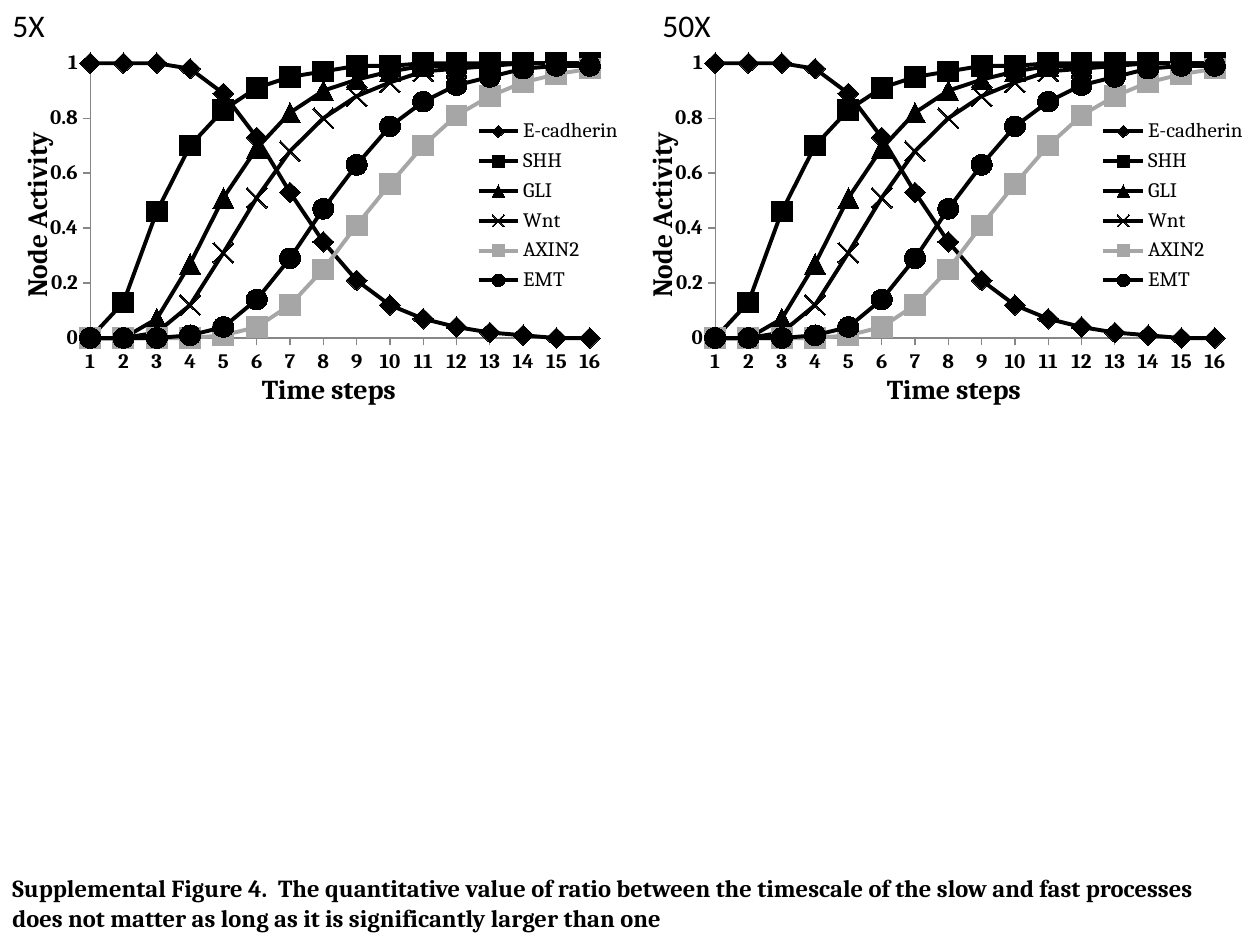
from lxml import etree
from pptx import Presentation
from pptx import util as u
from pptx.chart import data
from pptx.dml.color import RGBColor
from pptx.enum import chart as ch
from pptx.oxml.ns import qn

BLACK = RGBColor(0x00, 0x00, 0x00)
GRAY = RGBColor(0xA6, 0xA6, 0xA6)
AXIS_GRAY = RGBColor(0x86, 0x86, 0x86)
SCALE = u.Inches(1) / 126

MARK = ch.XL_MARKER_STYLE
SERIES = [
    ("E-cadherin", MARK.DIAMOND, BLACK,
     (1, 1, 1, 0.98, 0.89, 0.73, 0.53, 0.35, 0.21, 0.12, 0.07, 0.04, 0.02, 0.01, 0, 0)),
    ("SHH", MARK.SQUARE, BLACK,
     (0, 0.13, 0.46, 0.7, 0.83, 0.91, 0.95, 0.97, 0.99, 0.99, 1, 1, 1, 1, 1, 1)),
    ("GLI", MARK.TRIANGLE, BLACK,
     (0, 0, 0.07, 0.27, 0.51, 0.69, 0.82, 0.9, 0.94, 0.97, 0.99, 0.99, 1, 1, 1, 1)),
    ("Wnt", MARK.X, BLACK,
     (0, 0, 0.02, 0.12, 0.31, 0.51, 0.68, 0.8, 0.88, 0.93, 0.97, 0.98, 0.99, 1, 1, 1)),
    ("AXIN2", MARK.SQUARE, GRAY,
     (0, 0, 0, 0, 0.01, 0.04, 0.12, 0.25, 0.41, 0.56, 0.7, 0.81, 0.88, 0.93, 0.96, 0.98)),
    ("EMT", MARK.CIRCLE, BLACK,
     (0, 0, 0, 0.01, 0.04, 0.14, 0.29, 0.47, 0.63, 0.77, 0.86, 0.92, 0.95, 0.98, 0.99, 0.99)),
]


def px(*lengths):
    return [u.Emu(round(n * SCALE)) for n in lengths]


def set_font(font, size, name, bold=False):
    font.size, font.name, font.bold = u.Pt(size), name, bold
    font.color.rgb = BLACK


def set_layout(parent, index, target=None, **box):
    old = parent.find(qn("c:layout"))
    if old is not None:
        parent.remove(old)
    layout = etree.Element(qn("c:layout"))
    manual = etree.SubElement(layout, qn("c:manualLayout"))
    values = {"layoutTarget": target} if target else {}
    values.update(xMode="edge", yMode="edge", **box)
    for tag, value in values.items():
        etree.SubElement(manual, qn("c:" + tag)).set("val", str(value))
    parent.insert(index, layout)


class Figure:
    def __init__(self, prs, heading_font="Cambria", body_font="Calibri"):
        self.s = prs.slides.add_slide(prs.slide_layouts[6])
        self.heading_font = heading_font
        self.body_font = body_font

    def label(self, words, box, size, font, bold=False):
        tf = self.s.shapes.add_textbox(*px(*box)).text_frame
        tf.word_wrap = True
        p = tf.paragraphs[0]
        p.text = words
        set_font(p.font, size, font, bold)

    def axis(self, axis, title, x, y):
        axis.has_major_gridlines = False
        axis.major_tick_mark = ch.XL_TICK_MARK.OUTSIDE
        axis.format.line.color.rgb = AXIS_GRAY
        set_font(axis.tick_labels.font, 12, self.heading_font, True)
        p = axis.axis_title.text_frame.paragraphs[0]
        p.text = title
        set_font(p.font, 16, self.heading_font, True)
        set_layout(axis.axis_title._element, 1, x=x, y=y)

    def activity_chart(self, box):
        cd = data.CategoryChartData()
        cd.categories = [str(step) for step in range(1, 17)]
        for name, _, _, values in SERIES:
            cd.add_series(name, values)
        chart = self.s.shapes.add_chart(
            ch.XL_CHART_TYPE.LINE_MARKERS, *px(*box), cd).chart
        chart.has_title = False
        set_font(chart.font, 10, self.body_font)

        plot = chart.plots[0]
        plot.vary_by_categories = False
        for ser, (_, style, color, _) in zip(plot.series, SERIES):
            ser.smooth = False
            ser.format.line.color.rgb = color
            ser.marker.style = style
            ser.marker.size = 12
            ser.marker.format.fill.solid()
            ser.marker.format.fill.fore_color.rgb = color
            ser.marker.format.line.color.rgb = color

        self.axis(chart.category_axis, "Time steps", 0.37, 0.89)
        values = chart.value_axis
        self.axis(values, "Node Activity", 0.02, 0.23)
        values.minimum_scale, values.maximum_scale = 0, 1
        values.major_unit = 0.2
        values.tick_labels.number_format = "General"
        values.tick_labels.number_format_is_linked = False
        cross = values._element.find(qn("c:crossBetween"))
        if cross is None:
            cross = etree.Element(qn("c:crossBetween"))
            values._element.find(qn("c:majorUnit")).addprevious(cross)
        cross.set("val", "midCat")
        area = chart._chartSpace.chart.plotArea
        set_layout(area, 0, "inner", x=0.13, y=0.04, w=0.72, h=0.77)

        chart.has_legend = True
        legend = chart.legend
        legend.position = ch.XL_LEGEND_POSITION.RIGHT
        legend.include_in_layout = False
        set_font(legend.font, 12, self.heading_font)
        set_layout(legend._element, 1, x=0.68, y=0.18, w=0.22, h=0.52)


def main():
    prs = Presentation()
    prs.slide_width, prs.slide_height = px(1260, 945)
    fig = Figure(prs)
    fig.label("Supplemental Figure 4. \u00a0The quantitative value of ratio between "
              "the timescale of the slow and fast processes does not matter as long "
              "as it is significantly larger than one",
              (0, 867, 1260, 72), 14, fig.heading_font, True)
    for ratio, label_left, chart_left in (("50X", 650, 625), ("5X", 0, 0)):
        fig.label(ratio, (label_left, 0, 108, 50), 18, fig.body_font)
        fig.activity_chart((chart_left, 49, 694, 365))
    prs.save("out.pptx")


if __name__ == "__main__":
    main()
